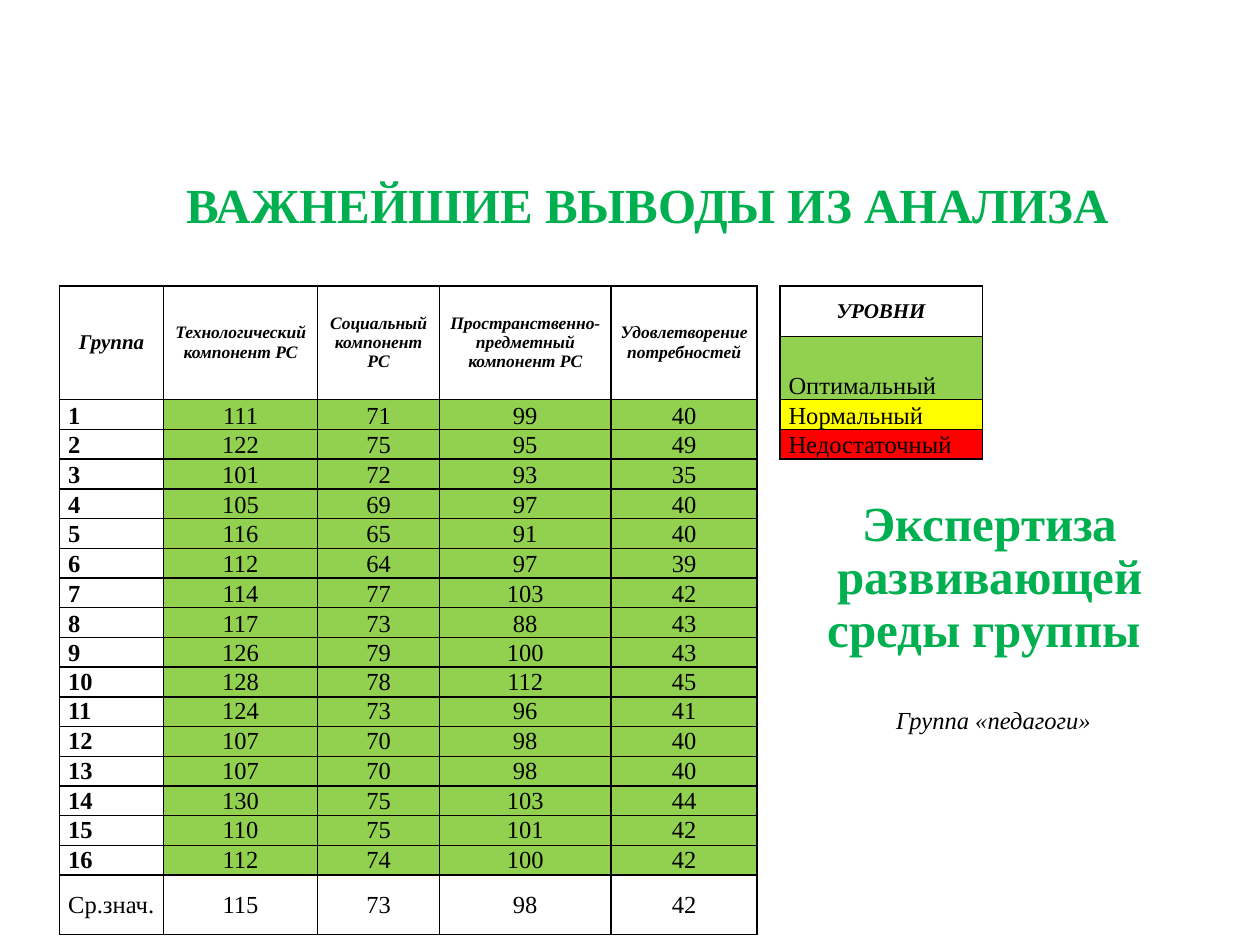
from lxml.etree import SubElement
from pptx import Presentation
from pptx.dml.color import RGBColor
from pptx.enum.text import MSO_ANCHOR, MSO_AUTO_SIZE, PP_ALIGN
from pptx.oxml.ns import qn
from pptx.util import Pt

GREEN, OPTIMAL, NORMAL, POOR, BLACK = "00B050", "92D050", "FFFF00", "FF0000", "000000"
HEADERS = ["Группа", "Технологический компонент РС", "Социальный компонент РС",
           "Пространственно-предметный компонент РС", "Удовлетворение потребностей"]
SCORES = [
    (111, 71, 99, 40), (122, 75, 95, 49), (101, 72, 93, 35), (105, 69, 97, 40),
    (116, 65, 91, 40), (112, 64, 97, 39), (114, 77, 103, 42), (117, 73, 88, 43),
    (126, 79, 100, 43), (128, 78, 112, 45), (124, 73, 96, 41), (107, 70, 98, 40),
    (107, 70, 98, 40), (130, 75, 103, 44), (110, 75, 101, 42), (112, 74, 100, 42),
]
AVERAGES = (115, 73, 98, 42)
LEVELS = [("Оптимальный", OPTIMAL), ("Нормальный", NORMAL), ("Недостаточный", POOR)]
COLUMN_WIDTHS = [59.5, 88, 69.7, 98, 83.5, 13, 103, 7.2]
ROW_HEIGHTS = [29, 36] + [17] * len(SCORES) + [34]
SPACER = len(HEADERS)
LEGEND = SPACER + 1
LEGEND_ROWS = 1 + len(LEVELS)


def color(hex_value):
    return RGBColor.from_string(hex_value)


def is_framed(row, column):
    """Tell whether a grid position belongs to the scores or to the legend."""
    if not (0 <= row < len(ROW_HEIGHTS) and 0 <= column < len(COLUMN_WIDTHS)):
        return False
    return column < SPACER or (column > SPACER and row < LEGEND_ROWS)


class SlideBuilder:
    font_name = "Times New Roman"

    def __init__(self, slide):
        self.slide = slide

    def add_run(self, paragraph, text, size, hex_value=BLACK, bold=False, italic=False):
        run = paragraph.add_run()
        run.text = text
        font = run.font
        font.name, font.size = self.font_name, Pt(size)
        font.bold, font.italic = bold, italic
        font.color.rgb = color(hex_value)

    def text(self, box, text, size, wrap=True, line_spacing=None, **style):
        frame = self.slide.shapes.add_textbox(*map(Pt, box)).text_frame
        frame.word_wrap = wrap
        frame.auto_size = MSO_AUTO_SIZE.SHAPE_TO_FIT_TEXT
        paragraph = frame.paragraphs[0]
        paragraph.alignment = PP_ALIGN.CENTER
        paragraph.line_spacing = line_spacing
        self.add_run(paragraph, text, size, **style)

    def table(self, left, top, widths, heights):
        frame = self.slide.shapes.add_table(
            len(heights), len(widths), Pt(left), Pt(top), Pt(sum(widths)), Pt(sum(heights)))
        table = frame.table
        table.first_row = table.horz_banding = False
        for column, width in zip(table.columns, widths):
            column.width = Pt(width)
        for r, height in enumerate(heights):
            table.rows[r].height = Pt(height)
            for c in range(len(widths)):
                self.prepare_cell(table.cell(r, c), r, c)
        return table

    def prepare_cell(self, cell, row, column):
        """Set insets and draw each edge that touches a framed position."""
        cell.margin_left = cell.margin_right = Pt(5)
        cell.margin_top = cell.margin_bottom = 0
        properties = cell._tc.get_or_add_tcPr()
        neighbours = {"a:lnL": (row, column - 1), "a:lnR": (row, column + 1),
                      "a:lnT": (row - 1, column), "a:lnB": (row + 1, column)}
        for tag, neighbour in neighbours.items():
            line = SubElement(properties, qn(tag), w=str(Pt(1)))
            if is_framed(row, column) or is_framed(*neighbour):
                fill = SubElement(line, qn("a:solidFill"))
                SubElement(fill, qn("a:srgbClr"), val=BLACK)
            else:
                SubElement(line, qn("a:noFill"))
        cell.fill.background()
        # A small end mark keeps empty cells from stretching their row.
        SubElement(cell.text_frame.paragraphs[0]._p, qn("a:endParaRPr"), sz="1000")

    def cell(self, cell, text, size=14, align=PP_ALIGN.CENTER, anchor=MSO_ANCHOR.MIDDLE,
             fill=None, **style):
        cell.vertical_anchor = anchor
        if fill:
            cell.fill.solid()
            cell.fill.fore_color.rgb = color(fill)
        paragraph = cell.text_frame.paragraphs[0]
        paragraph.alignment = align
        self.add_run(paragraph, str(text), size, **style)


def fill_scores(builder, table):
    for c, header in enumerate(HEADERS):
        table.cell(0, c).merge(table.cell(1, c))
        builder.cell(table.cell(0, c), header, 10 if c else 12, bold=True, italic=True)
    for group, scores in enumerate(SCORES, 1):
        row = group + 1
        anchor = MSO_ANCHOR.BOTTOM if group < 10 else MSO_ANCHOR.MIDDLE
        builder.cell(table.cell(row, 0), group, align=PP_ALIGN.JUSTIFY, anchor=anchor, bold=True)
        for c, score in enumerate(scores, 1):
            builder.cell(table.cell(row, c), score, anchor=anchor, fill=OPTIMAL)
    last = len(ROW_HEIGHTS) - 1
    builder.cell(table.cell(last, 0), "Ср.знач.", align=PP_ALIGN.JUSTIFY)
    for c, average in enumerate(AVERAGES, 1):
        builder.cell(table.cell(last, c), average)


def fill_legend(builder, table):
    for r in range(LEGEND_ROWS):
        table.cell(r, LEGEND).merge(table.cell(r, LEGEND + 1))
    builder.cell(table.cell(0, LEGEND), "УРОВНИ", 12, bold=True, italic=True)
    for r, (level, fill) in enumerate(LEVELS, 1):
        builder.cell(table.cell(r, LEGEND), level, align=PP_ALIGN.JUSTIFY,
                     anchor=MSO_ANCHOR.BOTTOM, fill=fill)


def main():
    presentation = Presentation()
    presentation.slide_width, presentation.slide_height = Pt(720), Pt(540)
    builder = SlideBuilder(presentation.slides.add_slide(presentation.slide_layouts[6]))
    heading = dict(size=28, line_spacing=0.9, hex_value=GREEN, bold=True)
    builder.text((96.5, 100, 547, 38), "ВАЖНЕЙШИЕ ВЫВОДЫ ИЗ АНАЛИЗА", wrap=False, **heading)
    builder.text((444, 281.5, 243.5, 98.5), "Экспертиза развивающей среды группы ", **heading)
    table = builder.table(34, 163.3, COLUMN_WIDTHS, ROW_HEIGHTS)
    fill_scores(builder, table)
    fill_legend(builder, table)
    builder.text((444, 399.5, 247.5, 24.5), "Группа «педагоги»", 14, italic=True)
    presentation.save("out.pptx")


if __name__ == "__main__":
    main()
